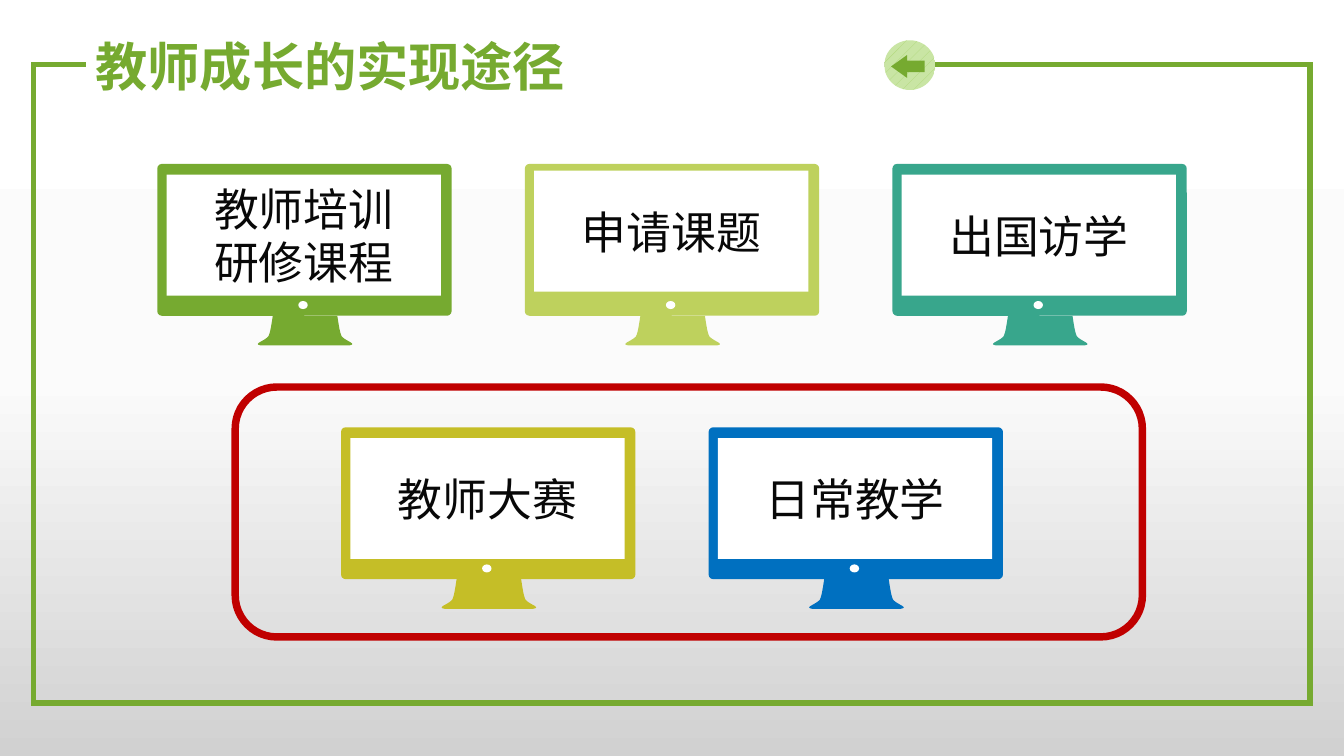
from copy import deepcopy

from lxml import etree
from pptx import Presentation
from pptx.dml.color import RGBColor
from pptx.enum import dml, lang, shapes, text
from pptx.oxml.ns import qn
from pptx.util import Inches, Pt

GREEN = "76AA30"
PITCH = 2.735
SHAPE = shapes.MSO_SHAPE


def rgb(color):
    return RGBColor.from_string(color)


def finish(sp, fill=None, line=None, width=0):
    """Apply a flat fill and outline; None leaves that part empty."""
    sp.shadow.inherit = False
    if fill:
        sp.fill.solid()
        sp.fill.fore_color.rgb = rgb(fill)
    else:
        sp.fill.background()
    if line:
        sp.line.color.rgb = rgb(line)
        sp.line.width = Pt(width)
    else:
        sp.line.fill.background()


prs = Presentation()
prs.slide_width, prs.slide_height = Inches(10), Inches(10 * 9 / 16)
s = prs.slides.add_slide(prs.slide_layouts[5])

# Background gradient, top to bottom
bg = s.background.fill
bg.gradient()
bg.gradient_angle = 270
stops = s.element.find(".//{*}gsLst")
stops.append(deepcopy(stops[-1]))
for stop, (pos, color) in zip(bg.gradient_stops, [(0, "FFFFFF"), (0.5, "FBFBFB"), (1, "D1D1D1")]):
    stop.position = pos
    stop.color.rgb = rgb(color)

# Frame with square corners, and arrow badge
frame = s.shapes.add_shape(SHAPE.RECTANGLE, Inches(0.25), Inches(0.48), Inches(9.5), Inches(4.75))
finish(frame, line=GREEN, width=3)
etree.SubElement(frame.element.find(".//{*}ln"), qn("a:miter"), lim="800000")
badge = s.shapes.add_shape(SHAPE.OVAL, Inches(6.58), Inches(0.3), Inches(0.38), Inches(0.37))
finish(badge)
badge.fill.patterned()
badge.fill.pattern = dml.MSO_PATTERN.PERCENT_20
badge.fill.fore_color.rgb = rgb("AFD876")
badge.fill.back_color.rgb = rgb("C9E5A4")
arrow = s.shapes.add_shape(SHAPE.LEFT_ARROW, Inches(6.63), Inches(0.41), Inches(0.25), Inches(0.17))
arrow.adjustments[1] = 0.7
finish(arrow, GREEN)

# Title, placed above the frame so that it interrupts the line
title = s.shapes.title
arrow.element.addnext(title.element)
title.left, title.top, title.width, title.height = Inches(0.64), Inches(0.26), Inches(5.94), Inches(0.52)
title.fill.solid()
title.fill.fore_color.rgb = rgb("FFFFFF")
tf = title.text_frame
tf.text = "教师成长的实现途径"
tf.vertical_anchor = text.MSO_ANCHOR.MIDDLE
tf.auto_size = text.MSO_AUTO_SIZE.NONE
tf.margin_left = tf.margin_right = Inches(0.07)
tf.margin_top = tf.margin_bottom = Inches(0.04)
p = tf.paragraphs[0]
p.alignment = text.PP_ALIGN.LEFT
p.line_spacing = 0.9
p.font.name, p.font.size, p.font.bold = "Roboto", Pt(28), True
p.font.color.rgb = rgb(GREEN)
p.font.language_id = lang.MSO_LANGUAGE_ID.SIMPLIFIED_CHINESE

# Right half of the monitor stand: two Bezier curves, mirrored for the left half
curves = [
    [(0.24, 0), (0.25, 0.06), (0.26, 0.15), (0.28, 0.16)],
    [(0.28, 0.16), (0.31, 0.19), (0.39, 0.21), (0.33, 0.22)],
]
right = []
for curve in curves:
    for t in [i / 8 for i in range(9)]:
        weights = [(1 - t) ** 3, 3 * t * (1 - t) ** 2, 3 * t * t * (1 - t), t ** 3]
        right.append(tuple(sum(w * pt[axis] for w, pt in zip(weights, curve)) for axis in (0, 1)))
stand_outline = right + [(-x, y) for x, y in reversed(right)]

# Monitors: column, row top, screen offset, colour, lines
monitors = [
    (0, 1.22, 0.08, GREEN, ["教师培训", "研修课程"]),
    (1, 1.22, 0.05, "BED15D", ["申请课题"]),
    (2, 1.22, 0.08, "38A68C", ["出国访学"]),
    (0.5, 3.18, 0.08, "C5BE27", ["教师大赛"]),
    (1.5, 3.18, 0.08, "0070C0", ["日常教学"]),
]
for column, top, screen_dy, color, lines in monitors:
    left = 1.17 + column * PITCH
    body = s.shapes.add_shape(SHAPE.ROUNDED_RECTANGLE, Inches(left), Inches(top), Inches(2.19), Inches(1.13))
    body.adjustments[0] = 0.03
    finish(body, color)

    points = [(Inches(left + 1.1 + x), Inches(top + 1.13 + y)) for x, y in stand_outline]
    builder = s.shapes.build_freeform(*points[0])
    builder.add_line_segments(points[1:], close=True)
    finish(builder.convert_to_shape(), color)

    button = s.shapes.add_shape(SHAPE.OVAL, Inches(left + 1.05), Inches(top + 1.02), Inches(0.07), Inches(0.06))
    finish(button, "FFFFFF")

    screen = s.shapes.add_shape(
        SHAPE.RECTANGLE, Inches(left + 0.07), Inches(top + screen_dy), Inches(2.04), Inches(0.9))
    finish(screen, "FFFFFF")
    tf = screen.text_frame
    tf.word_wrap = True
    tf.vertical_anchor = text.MSO_ANCHOR.MIDDLE
    tf.text = "\n".join(lines)
    for p in tf.paragraphs:
        p.alignment = text.PP_ALIGN.CENTER
        p.font.name, p.font.size = "Noto Sans CJK SC", Pt(24)
        p.font.color.rgb = rgb("080808")
        p.font.language_id = lang.MSO_LANGUAGE_ID.SIMPLIFIED_CHINESE

# Highlight around the second row
highlight = s.shapes.add_shape(
    SHAPE.ROUNDED_RECTANGLE, Inches(1.75), Inches(2.88), Inches(6.75), Inches(1.86))
finish(highlight, line="C00000", width=4)

prs.save("out.pptx")
